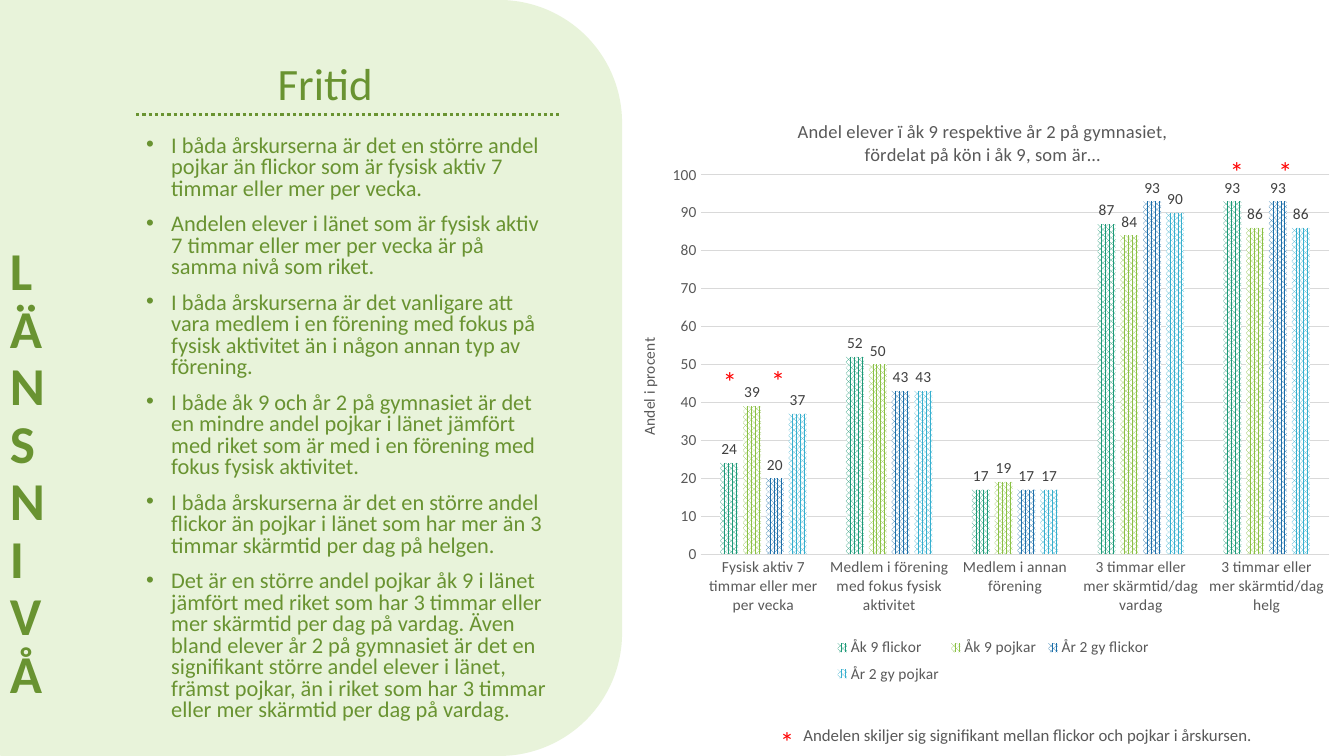
from lxml import etree
from pptx import Presentation
from pptx.chart.data import CategoryChartData
from pptx.dml.color import RGBColor
from pptx.enum import chart as charts, dml, shapes, text
from pptx.oxml import parse_xml
from pptx.oxml.ns import nsdecls, qn
from pptx.util import Inches, Pt

COLORS = {"panel": "E8F3DA", "green": "699331", "white": "FFFFFF", "grey": "595959",
          "label": "404040", "grid": "D9D9D9", "red": "FF0000"}
BULLETS = [
    "I båda årskurserna är det en större andel pojkar än flickor som är fysisk aktiv 7 timmar eller mer per vecka.",
    "Andelen elever i länet som är fysisk aktiv 7 timmar eller mer per vecka är på samma nivå som riket.",
    "I båda årskurserna är det vanligare att vara medlem i en förening med fokus på fysisk aktivitet än i någon "
    "annan typ av förening.",
    "I både åk 9 och år 2 på gymnasiet är det en mindre andel pojkar i länet jämfört med riket som är med i en "
    "förening med fokus fysisk aktivitet.",
    "I båda årskurserna är det en större andel flickor än pojkar i länet som har mer än 3 timmar skärmtid per dag "
    "på helgen.",
    "Det är en större andel pojkar åk 9 i länet jämfört med riket som har 3 timmar eller mer skärmtid per dag på "
    "vardag. Även bland elever år 2 på gymnasiet är det en signifikant större andel elever i länet, främst pojkar, "
    "än i riket som har 3 timmar eller mer skärmtid per dag på vardag.",
]
CATEGORIES = ["Fysisk aktiv 7 timmar eller mer per vecka", "Medlem i förening med fokus fysisk aktivitet",
              "Medlem i annan förening", "3 timmar eller mer skärmtid/dag vardag",
              "3 timmar eller mer skärmtid/dag helg"]
SERIES = [
    ("Åk 9 flickor", "1D9A78", (24, 52, 17, 87, 93)),
    ("Åk 9 pojkar", "8BC145", (39, 50, 19, 84, 86)),
    ("År 2 gy flickor", "1D6FA9", (20, 43, 17, 93, 93)),
    ("År 2 gy pojkar", "36AFCE", (37, 43, 17, 90, 86)),
]
# Asterisk positions relative to the chart's corner
STARS = [(0.91, 2.6), (1.39, 2.59), (5.94, 0.51), (6.42, 0.51)]


def rgb(name):
    return RGBColor.from_string(COLORS.get(name, name))


def style_font(font, size, color, bold=False):
    for key, value in {"name": "Calibri", "size": Pt(size), "bold": bold}.items():
        setattr(font, key, value)
    font.color.rgb = rgb(color)


def add_text(slide, box, lines, size, color, bold=False, anchor=text.MSO_ANCHOR.TOP, **paragraph_format):
    shape = slide.shapes.add_textbox(*map(Inches, box))
    frame = shape.text_frame
    frame.word_wrap = True
    frame.vertical_anchor = anchor
    for index, line in enumerate(lines):
        paragraph = frame.paragraphs[0] if index == 0 else frame.add_paragraph()
        run = paragraph.add_run()
        run.text = line
        style_font(run.font, size, color, bold)
        for key, value in paragraph_format.items():
            setattr(paragraph, key, value)
    return shape


def add_panel(slide, left, top, width, height):
    """Green rounded panel that bleeds off the left edge, with the vertical word."""
    panel = slide.shapes.add_shape(shapes.MSO_SHAPE.ROUNDED_RECTANGLE,
                                   *map(Inches, (left, top, width, height)))
    panel.shadow.inherit = False
    panel.fill.solid()
    panel.fill.fore_color.rgb = rgb("panel")
    panel.line.fill.background()
    word = add_text(slide, (0, top + 0.47, 1.05, 6.57), ["LÄNSNIVÅ"], 38, "green", True,
                    text.MSO_ANCHOR.BOTTOM, line_spacing=0.9)
    word.text_frame._txBody.bodyPr.set("vert", "wordArtVert")


def add_findings(slide, left, top, width, height):
    """Heading, dotted rule and bullet list."""
    add_text(slide, (left, top, 3.75, 0.98), ["Fritid"], 32, "green", anchor=text.MSO_ANCHOR.BOTTOM,
             alignment=text.PP_ALIGN.CENTER, line_spacing=0.9)
    rule_y = Inches(top + 0.98)
    rule = slide.shapes.add_connector(shapes.MSO_CONNECTOR.STRAIGHT, Inches(left), rule_y,
                                      Inches(left + width), rule_y)
    rule.line.color.rgb = rgb("green")
    rule.line.width = Pt(2.25)
    rule.line.dash_style = dml.MSO_LINE.ROUND_DOT
    etree.SubElement(rule._element.spPr, qn("a:effectLst"))
    body = add_text(slide, (left, top + 1.14, width, height - 1.14), BULLETS, 16, "green",
                    line_spacing=0.8, space_before=Pt(10))
    for paragraph in body.text_frame.paragraphs:
        properties = paragraph._p.get_or_add_pPr()
        properties.set("marL", str(Inches(0.25)))
        properties.set("indent", str(-Inches(0.25)))
        etree.SubElement(properties, qn("a:buFont")).set("typeface", "Arial")
        etree.SubElement(properties, qn("a:buChar")).set("char", "•")


def set_layout(parent, before, inner=False, **edges):
    """Place a chart part by fractions of the chart, ahead of the first tag found in before."""
    for layout in parent.findall(qn("c:layout")):
        parent.remove(layout)
    values = {"layoutTarget": "inner"} if inner else {}
    values.update(xMode="edge", yMode="edge", **edges)
    items = "".join(f'<c:{key} val="{value}"/>' for key, value in values.items())
    layout = parse_xml(f'<c:layout {nsdecls("c")}><c:manualLayout>{items}</c:manualLayout></c:layout>')
    following = next(child for child in parent if child.tag in [qn(tag) for tag in before])
    following.addprevious(layout)


def fill_title(title, lines, size, **position):
    frame = title.text_frame
    for index, line in enumerate(lines):
        paragraph = frame.paragraphs[0] if index == 0 else frame.add_paragraph()
        run = paragraph.add_run()
        run.text = line
        style_font(run.font, size, "grey")
    set_layout(title._element, ["c:overlay"], **position)


def format_axes(chart):
    category_axis, value_axis = chart.category_axis, chart.value_axis
    for axis in (category_axis, value_axis):
        axis.major_tick_mark = axis.minor_tick_mark = charts.XL_TICK_MARK.NONE
        style_font(axis.tick_labels.font, 11, "grey")
    for line in (category_axis.format.line, value_axis.major_gridlines.format.line):
        line.color.rgb = rgb("grid")
        line.width = Pt(0.75)
    value_axis.format.line.fill.background()
    for key, value in {"minimum_scale": 0, "maximum_scale": 100, "major_unit": 10}.items():
        setattr(value_axis, key, value)
    fill_title(value_axis.axis_title, ["Andel i procent"], 11, x=0.02, y=0.4)
    value_axis.axis_title.text_frame._txBody.bodyPr.set("rot", "-5400000")


def add_leisure_chart(slide, left, top, width, height):
    """Column chart with significance stars and their explanation."""
    data = CategoryChartData(number_format="0")
    data.categories = CATEGORIES
    for name, _, values in SERIES:
        data.add_series(name, values)
    chart = slide.shapes.add_chart(charts.XL_CHART_TYPE.COLUMN_CLUSTERED,
                                   *map(Inches, (left, top, width, height)), data).chart
    style_font(chart.font, 11, "grey")
    fill_title(chart.chart_title, ["Andel elever ï åk 9 respektive år 2 på gymnasiet,",
                                   "fördelat på kön i åk 9, som är…"], 13.2, x=0.24, y=0.03)
    format_axes(chart)

    plot = chart.plots[0]
    for key, value in {"gap_width": 219, "overlap": -27, "vary_by_categories": False}.items():
        setattr(plot, key, value)
    for series, (_, color, _) in zip(plot.series, SERIES):
        fill = series.format.fill
        fill.patterned()
        fill.pattern = dml.MSO_PATTERN.PERCENT_75
        fill.fore_color.rgb = rgb(color)
        fill.back_color.rgb = rgb("white")
        labels = series.data_labels
        for key, value in {"show_value": True, "position": charts.XL_LABEL_POSITION.OUTSIDE_END,
                           "number_format": "0", "number_format_is_linked": False}.items():
            setattr(labels, key, value)
        style_font(labels.font, 11, "label")
    plot_area = chart._chartSpace.chart.plotArea
    set_layout(plot_area, ["c:barChart"], inner=True, x=0.11, y=0.13, w=0.87, h=0.64)

    chart.has_legend = True
    legend = chart.legend
    legend.position = charts.XL_LEGEND_POSITION.BOTTOM
    legend.include_in_layout = False
    style_font(legend.font, 11, "grey")
    set_layout(legend._element, ["c:overlay"], x=0.29, y=0.9, w=0.45, h=0.1)

    note_left, note_top = left + 1.71, top + 6.17
    star_positions = [(left + x, top + y) for x, y in STARS] + [(note_left - 0.23, note_top)]
    for x, y in star_positions:
        add_text(slide, (x, y, 0.48, 0.36), ["*"], 20, "red")
    add_text(slide, (note_left, note_top, 4.71, 0.3),
             ["Andelen skiljer sig signifikant mellan flickor och pojkar i årskursen."], 12, "grey")


def main():
    presentation = Presentation()
    presentation.slide_width, presentation.slide_height = Inches(13.33), Inches(7.5)
    slide = presentation.slides.add_slide(presentation.slide_layouts[6])
    add_panel(slide, -1.14, 0, 7.31, 7.5)
    add_findings(slide, 1.35, 0.16, 4.21, 7.34)
    add_leisure_chart(slide, 6.16, 0.97, 7.17, 5.88)
    presentation.save("out.pptx")


if __name__ == "__main__":
    main()
